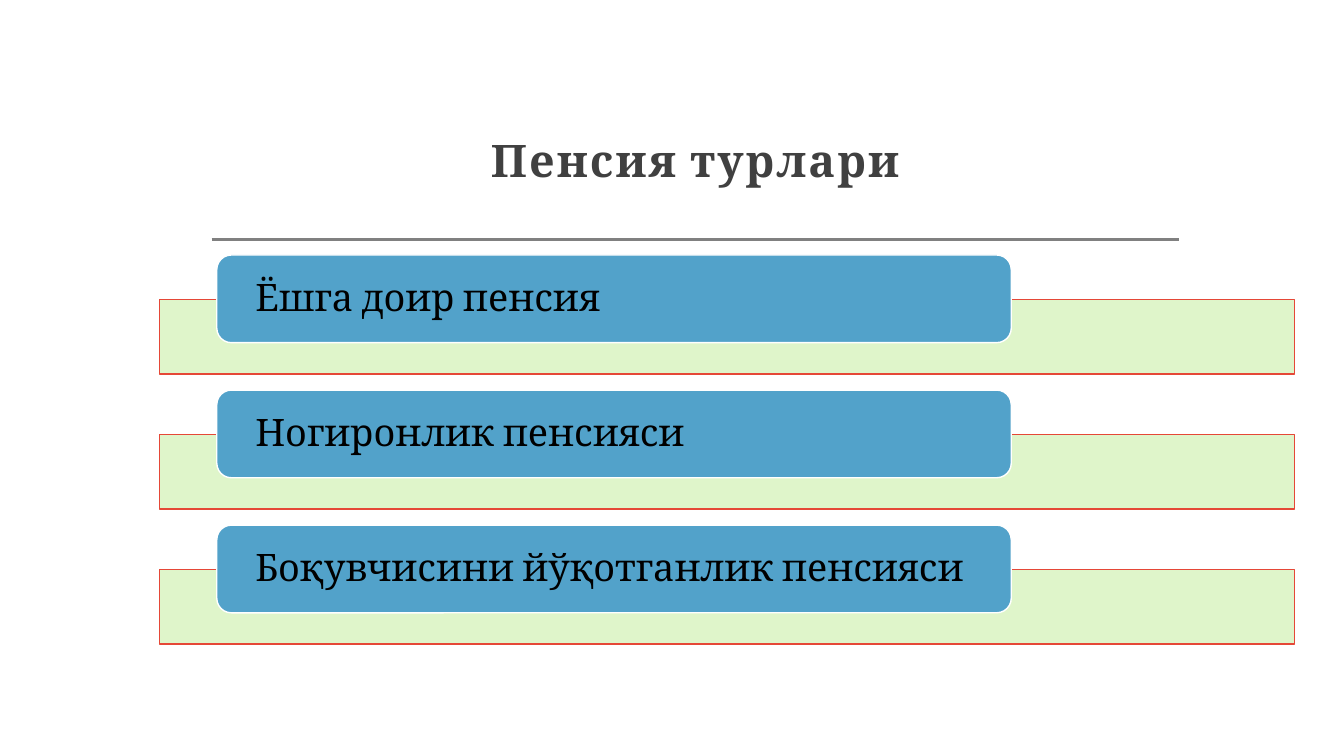
from lxml.etree import SubElement
from pptx import Presentation
from pptx.dml.color import RGBColor
from pptx.enum.shapes import MSO_CONNECTOR, MSO_SHAPE
from pptx.enum.text import MSO_ANCHOR, PP_ALIGN
from pptx.oxml.ns import qn
from pptx.util import Pt

PX = 9144  # 100 px to the inch
FONT = "Cambria"
HUES = {
    "title": "404040", "rule": "808080", "bar": "DCF5C5", "edge": "E54837",
    "label": "52A2CA", "rim": "FFFFFF", "text": "000000",
}
TYPES = ["Ёшга доир пенсия", "Ногиронлик пенсияси", "Боқувчисини йўқотганлик пенсияси"]


def emu(*sizes):
    return [size * PX for size in sizes]


def hue(name):
    return RGBColor.from_string(HUES[name])


def set_pads(frame, left, top, right, bottom):
    frame.margin_left, frame.margin_top, frame.margin_right, frame.margin_bottom = emu(
        left, top, right, bottom)


def set_font(para, size, color, bold=False):
    font = para.font
    font.name, font.size, font.bold = FONT, Pt(size), bold
    font.color.rgb = hue(color)


def add_block(slide, kind, box, fill, edge):
    block = slide.shapes.add_shape(kind, *emu(*box))
    block.shadow.inherit = False
    block.fill.solid()
    block.fill.fore_color.rgb = hue(fill)
    block.line.color.rgb = hue(edge)
    block.line.width = Pt(1)
    return block


def add_title(slide, box, text):
    left, top, width, height = box
    # Heading
    frame = slide.shapes.add_textbox(*emu(left, top, width, height)).text_frame
    frame.word_wrap = True
    frame.vertical_anchor = MSO_ANCHOR.BOTTOM
    set_pads(frame, 12, 12, 12, 10)
    para = frame.paragraphs[0]
    para.alignment = PP_ALIGN.CENTER
    para.line_spacing = 1.3
    set_font(para, 32, "title", True)
    run = para.add_run()
    run.text = text
    run.font._element.set("spc", "150")
    # Rule below the heading
    level = top + height + 43
    rule = slide.shapes.add_connector(
        MSO_CONNECTOR.STRAIGHT, *emu(left, level, left + width, level))
    rule.line.color.rgb = hue("rule")
    rule.line.width = Pt(2)
    SubElement(rule._element.spPr, qn("a:effectLst"))


def add_row(slide, box, text):
    left, top, width, height = box
    # Pale bar behind
    bar = add_block(slide, MSO_SHAPE.RECTANGLE, (left, top + 44, width, height - 44), "bar", "edge")
    color = bar._element.spPr.find(qn("a:solidFill"))[0]
    SubElement(color, qn("a:alpha"), val="90000")
    # Rounded label in front
    label = add_block(
        slide, MSO_SHAPE.ROUNDED_RECTANGLE, (left + 57, top, width * 7 // 10, 87), "label", "rim")
    frame = label.text_frame
    frame.word_wrap = True
    frame.vertical_anchor = MSO_ANCHOR.MIDDLE
    set_pads(frame, 34, 4, 34, 4)
    para = frame.paragraphs[0]
    para.text = text
    para.alignment = PP_ALIGN.LEFT
    para.line_spacing = 0.9
    set_font(para, 27, "text")


def add_list(slide, box, items):
    left, top, width, height = box
    gap = 16
    tall = (height - gap * (len(items) - 1)) // len(items)
    for index, item in enumerate(items):
        add_row(slide, (left, top + index * (tall + gap), width, tall), item)


def main():
    deck = Presentation()
    deck.slide_width, deck.slide_height = emu(1333, 750)
    slide = deck.slides.add_slide(deck.slide_layouts[6])
    add_title(slide, (210, 48, 959, 147), "Пенсия турлари")
    add_list(slide, (158, 253, 1126, 386), TYPES)
    deck.save("out.pptx")


if __name__ == "__main__":
    main()
